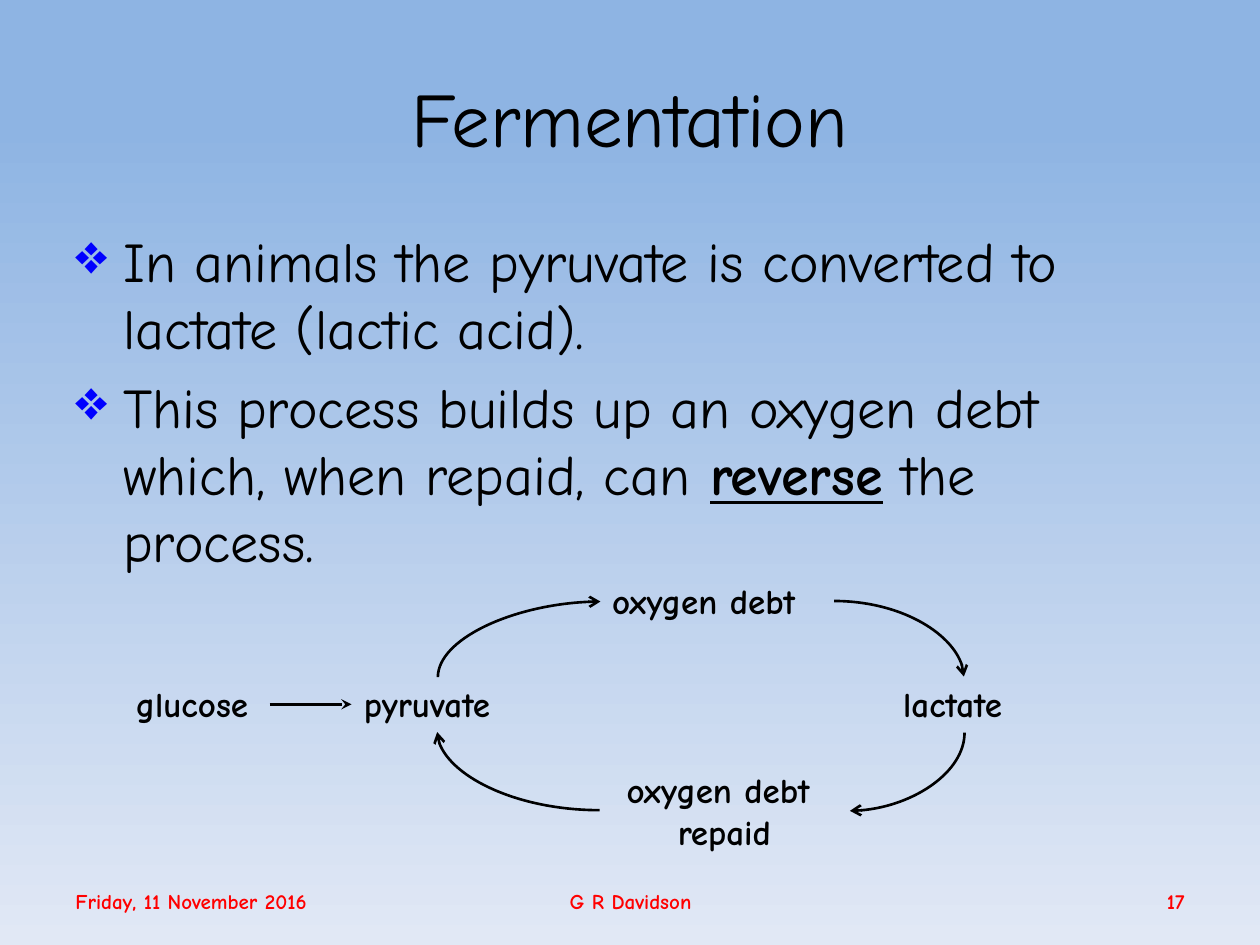
import pptx
import pptx.dml.color
import pptx.enum.shapes
import pptx.enum.text
import pptx.oxml.ns
import pptx.oxml.xmlchemy
import pptx.util

Inches = pptx.util.Inches
Pt = pptx.util.Pt
RGBColor = pptx.dml.color.RGBColor
Align = pptx.enum.text.PP_ALIGN
Anchor = pptx.enum.text.MSO_ANCHOR
Link = pptx.enum.shapes.MSO_CONNECTOR
Node = pptx.oxml.xmlchemy.OxmlElement
qn = pptx.oxml.ns.qn

BLACK = RGBColor(0x00, 0x00, 0x00)
RED = RGBColor(0xFF, 0x00, 0x00)
BLUE = RGBColor(0x00, 0x00, 0xFF)
SKY = RGBColor(0x8E, 0xB4, 0xE3)
PALE = RGBColor(0xE1, 0xE8, 0xF5)


class Sheet:
    """Draws styled elements on the current slide."""

    font = "Comic Neue"

    def __init__(self, slide):
        self.slide = slide
        self.shapes = slide.shapes

    def back(self, top, low):
        fill = self.slide.background.fill
        fill.gradient()
        fill.gradient_angle = 270
        for stop, color, place in zip(fill.gradient_stops, (top, low), (0.13, 1)):
            stop.color.rgb = color
            stop.position = place

    def style(self, para, size, color=BLACK, bold=None, align=Align.LEFT):
        para.alignment = align
        para.font.name = self.font
        para.font.size = Pt(size)
        para.font.color.rgb = color
        para.font.bold = bold

    def text(self, at, lines, size, color=BLACK, bold=None,
             align=Align.LEFT, anchor=Anchor.TOP, wrap=True):
        box = self.shapes.add_textbox(*map(Inches, at))
        frame = box.text_frame
        frame.word_wrap = wrap
        frame.vertical_anchor = anchor
        frame.text = lines
        for para in frame.paragraphs:
            self.style(para, size, color, bold, align)
        return box

    def label(self, at, lines, align=Align.LEFT):
        box = self.text(at, lines, 20, bold=True, align=align, wrap=False)
        box.text_frame.auto_size = pptx.enum.text.MSO_AUTO_SIZE.SHAPE_TO_FIT_TEXT
        return box

    def bullets(self, at, items, size):
        frame = self.text(at, "\n" * (len(items) - 1), size).text_frame
        for para, parts in zip(frame.paragraphs, items):
            para.space_before = Pt(size * 0.2)
            for words, strong in parts:
                run = para.add_run()
                run.text = words
                if strong:
                    run.font.bold = run.font.underline = True
            props = para._p.get_or_add_pPr()
            props.set("marL", str(Inches(0.38)))
            props.set("indent", str(Inches(-0.38)))
            tint, shade, mark = map(Node, ("a:buClr", "a:srgbClr", "a:buChar"))
            shade.set("val", str(BLUE))
            tint.append(shade)
            mark.set("char", "❖")
            rest = props.find(qn("a:defRPr"))
            rest.addprevious(tint)
            rest.addprevious(mark)

    def arrow(self, kind, start, end, head):
        link = self.shapes.add_connector(kind, *map(Inches, start + end))
        link.line.color.rgb = BLACK
        link.line.width = Pt(1.5)
        tail = Node("a:tailEnd")
        tail.set("type", head)
        props = link._element.spPr
        props.find(qn("a:ln")).append(tail)
        props.append(Node("a:effectLst"))
        return link

    def join(self, left, right):
        link = self.arrow(Link.STRAIGHT, (2.14, 5.59), (2.79, 5.59), "stealth")
        link.begin_connect(left, 3)
        link.end_connect(right, 1)

    def curve(self, left, top, width, height, turn=0, flip=False):
        link = self.arrow(Link.CURVE, (left, top), (left + width, top + height), "arrow")
        props = link._element.spPr
        props.find(qn("a:prstGeom")).set("prst", "curvedConnector2")
        frame = props.find(qn("a:xfrm"))
        frame.set("rot", str(turn * 60000))
        if flip:
            frame.set("flipH", "1")
            frame.set("flipV", "1")


def main():
    deck = pptx.Presentation()
    deck.slide_width, deck.slide_height = Inches(10), Inches(7.5)
    sheet = Sheet(deck.slides.add_slide(deck.slide_layouts[6]))
    sheet.back(SKY, PALE)

    sheet.text((0.5, 0.3, 9, 1.25), "Fermentation", 44,
               align=Align.CENTER, anchor=Anchor.MIDDLE)
    sheet.bullets((0.5, 1.75, 9, 2.94), [
        [("In animals the pyruvate is converted to lactate (lactic acid).", False)],
        [("This process builds up an oxygen debt which, when repaid, can ", False),
         ("reverse", True), (" the process.", False)],
    ], 32)

    for left, width, words, align in (
        (0.5, 3.32, "Friday, 11 November 2016", Align.LEFT),
        (3.42, 3.17, "G R Davidson", Align.CENTER),
        (7.17, 2.33, "17", Align.RIGHT),
    ):
        sheet.text((left, 6.95, width, 0.4), words, 12, RED, True, align, Anchor.MIDDLE)

    sugar = sheet.label((0.98, 5.37, 1.16, 0.44), "glucose")
    acid = sheet.label((2.79, 5.37, 1.37, 0.44), "pyruvate")
    sheet.label((4.76, 4.55, 1.86, 0.44), "oxygen debt")
    sheet.label((7.07, 5.37, 1.15, 0.44), "lactate")
    sheet.label((4.76, 6.05, 1.98, 0.77), "oxygen debt \nrepaid", Align.CENTER)

    sheet.join(sugar, acid)
    sheet.curve(3.82, 4.43, 0.6, 1.29, 90, True)
    sheet.curve(6.62, 4.77, 1.03, 0.6)
    sheet.curve(6.89, 5.67, 0.62, 0.91, 90)
    sheet.curve(3.47, 5.81, 1.29, 0.62, 180)

    deck.save("out.pptx")


if __name__ == "__main__":
    main()
